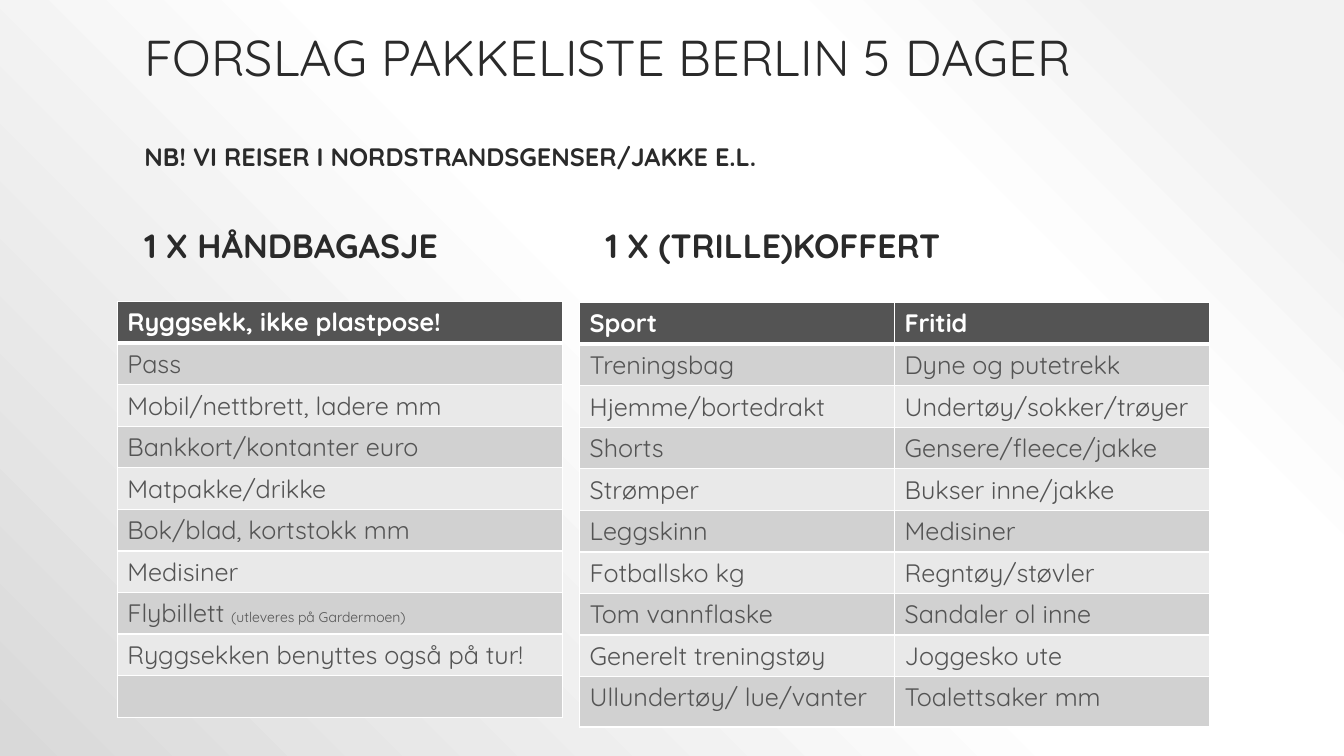
import pptx
import pptx.dml.color
import pptx.enum.text
import pptx.oxml
import pptx.oxml.ns
import pptx.util

Pt = pptx.util.Pt
FONT = "Quicksand"
INK, GRAY, WHITE = "2A2A2A", "545454", "FFFFFF"
BANDS = ("D1D1D1", "E9E9E9")
ROW_HEIGHT = 29.7

HAND_LUGGAGE = [
    ["Ryggsekk, ikke plastpose!"],
    ["Pass"],
    ["Mobil/nettbrett, ladere mm"],
    ["Bankkort/kontanter euro"],
    ["Matpakke/drikke"],
    ["Bok/blad, kortstokk mm"],
    ["Medisiner"],
    ["Flybillett "],
    ["Ryggsekken benyttes også på tur!"],
    [""],
]
TICKET_ROW = 7

SUITCASE = [
    ["Sport", "Fritid"],
    ["Treningsbag", "Dyne og putetrekk"],
    ["Hjemme/bortedrakt", "Undertøy/sokker/trøyer"],
    ["Shorts", "Gensere/fleece/jakke"],
    ["Strømper", "Bukser inne/jakke"],
    ["Leggskinn", "Medisiner"],
    ["Fotballsko kg", "Regntøy/støvler"],
    ["Tom vannflaske", "Sandaler ol inne"],
    ["Generelt treningstøy", "Joggesko ute"],
    ["Ullundertøy/ lue/vanter", "Toalettsaker mm"],
]


def rgb(value):
    return pptx.dml.color.RGBColor.from_string(value)


def write(paragraph, text, size=18, color=INK, bold=False):
    run = paragraph.add_run()
    run.text = text
    run.font.name = FONT
    run.font.size = Pt(size)
    run.font.bold = bold
    run.font.color.rgb = rgb(color)


def set_background(slide):
    """Radial gradient that spreads from the top right corner."""
    stops = ((10, "F2F2F2"), (28, WHITE), (48, WHITE), (100, "D9D9D9"))
    stop_xml = "".join(
        f'<a:gs pos="{pos * 1000}"><a:srgbClr val="{color}"/></a:gs>' for pos, color in stops
    )
    gradient = pptx.oxml.parse_xml(
        f'<a:gradFill {pptx.oxml.ns.nsdecls("a")} rotWithShape="1"><a:gsLst>{stop_xml}</a:gsLst>'
        '<a:path path="circle"><a:fillToRect l="100000" b="100000"/></a:path></a:gradFill>'
    )
    slide.background.fill.solid()
    properties = slide.background._cSld.bg.bgPr
    solid = properties.find(pptx.oxml.ns.qn("a:solidFill"))
    properties.replace(solid, gradient)


def add_text_box(slide, left, top, width, height, anchor):
    frame = slide.shapes.add_textbox(Pt(left), Pt(top), Pt(width), Pt(height)).text_frame
    frame.word_wrap = True
    frame.vertical_anchor = anchor
    frame.paragraphs[0].line_spacing = 0.9
    return frame


def add_heading(slide, text, left, width):
    frame = add_text_box(slide, left, 144, width, 66, pptx.enum.text.MSO_ANCHOR.MIDDLE)
    write(frame.paragraphs[0], text, size=24, bold=True)


def set_borders(cell, top, bottom):
    """White lines; top and bottom are widths in points."""
    widths = {"lnL": 1, "lnR": 1, "lnT": top, "lnB": bottom}
    properties = cell._tc.get_or_add_tcPr()
    for index, (side, width) in enumerate(widths.items()):
        properties.insert(index, pptx.oxml.parse_xml(
            f'<a:{side} {pptx.oxml.ns.nsdecls("a")} w="{Pt(width)}">'
            f'<a:solidFill><a:srgbClr val="{WHITE}"/></a:solidFill></a:{side}>'
        ))


def add_packing_table(slide, items, left, top, width, last_height=ROW_HEIGHT):
    columns = len(items[0])
    table = slide.shapes.add_table(
        len(items), columns, Pt(left), Pt(top), Pt(width), Pt(ROW_HEIGHT * len(items))
    ).table
    for column in table.columns:
        column.width = Pt(width / columns)
    for row, texts in enumerate(items):
        header = row == 0
        table.rows[row].height = Pt(last_height if row == len(items) - 1 else ROW_HEIGHT)
        for column, text in enumerate(texts):
            cell = table.cell(row, column)
            cell.fill.solid()
            cell.fill.fore_color.rgb = rgb(GRAY if header else BANDS[(row - 1) % 2])
            set_borders(cell, top=3 if row == 1 else 1, bottom=3 if header else 1)
            paragraph = cell.text_frame.paragraphs[0]
            if text:
                write(paragraph, text, color=WHITE if header else GRAY, bold=header)
            else:
                paragraph.font.size = Pt(18)
    return table


def main():
    deck = pptx.Presentation()
    deck.slide_width, deck.slide_height = Pt(960), Pt(540)
    slide = deck.slides.add_slide(deck.slide_layouts[6])
    set_background(slide)

    title = add_text_box(slide, 96, 21.6, 768, 104.4, pptx.enum.text.MSO_ANCHOR.BOTTOM)
    write(title.paragraphs[0], "FORSLAG PAKKELISTE BERLIN 5 DAGER", size=36)
    reminder = title.add_paragraph()
    reminder.line_spacing = 0.9
    reminder.space_before = Pt(40.5)
    write(reminder, "NB! VI REISER I NORDSTRANDSGENSER/JAKKE E.L.", bold=True)

    add_heading(slide, "1 X HÅNDBAGASJE", 96, 371)
    hand_luggage = add_packing_table(slide, HAND_LUGGAGE, 83.8, 215.5, 318)
    ticket = hand_luggage.cell(TICKET_ROW, 0).text_frame.paragraphs[0]
    write(ticket, "(utleveres på Gardermoen)", size=10, color=GRAY)

    add_heading(slide, "1 X (TRILLE)KOFFERT", 425.5, 438)
    add_packing_table(slide, SUITCASE, 414, 216.2, 450, last_height=36)

    deck.save("out.pptx")


if __name__ == "__main__":
    main()
